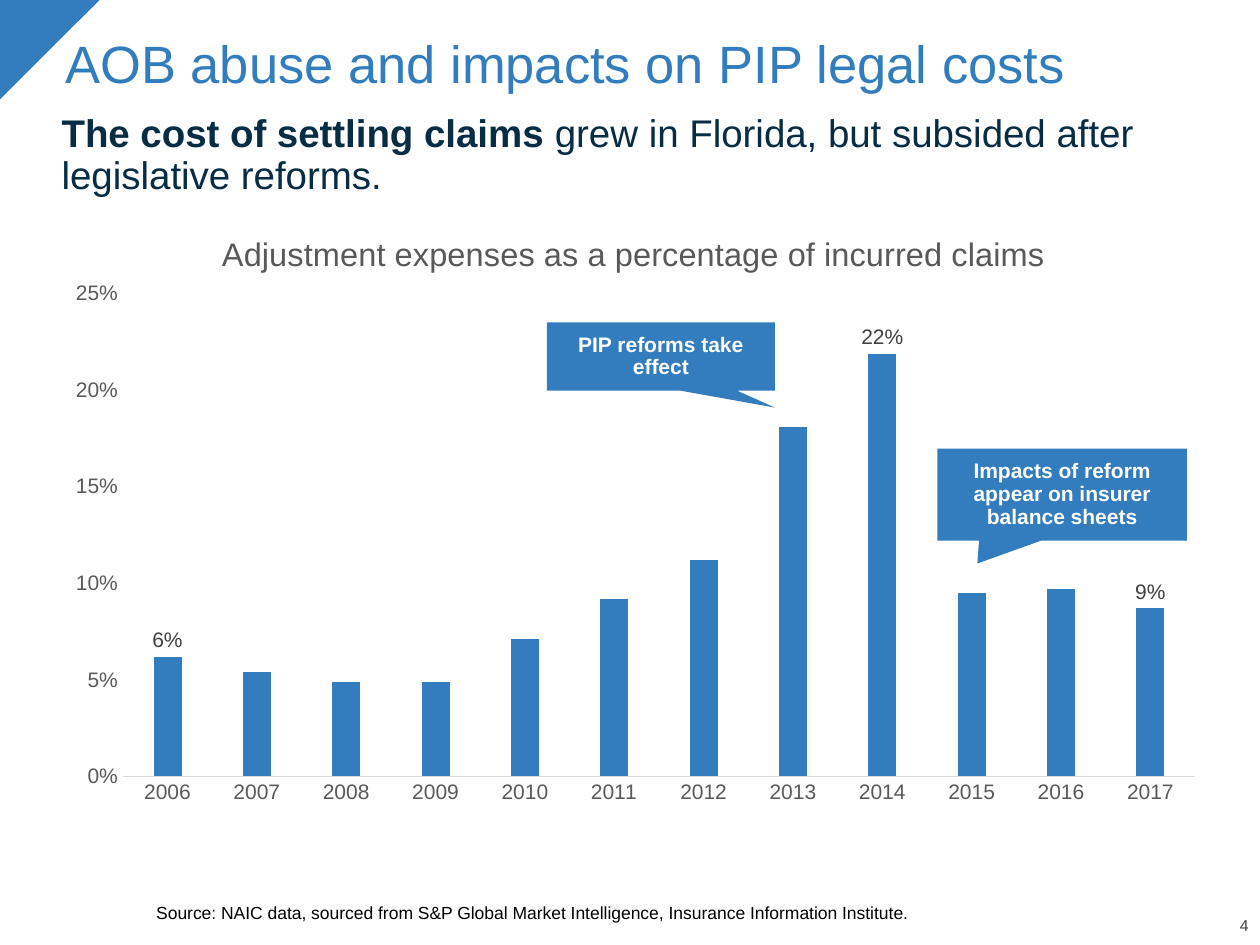
from dataclasses import dataclass

from lxml import etree
from pptx import Presentation
from pptx import util as u
from pptx.chart.data import CategoryChartData
from pptx.dml.color import RGBColor
from pptx.enum import chart as ch
from pptx.enum import shapes, text
from pptx.oxml.ns import qn

BLUE = RGBColor(0x33, 0x7D, 0xBE)
NAVY = RGBColor(0x07, 0x2C, 0x44)
GREY = RGBColor(0x59, 0x59, 0x59)
DARK = RGBColor(0x40, 0x40, 0x40)
PALE = RGBColor(0xD9, 0xD9, 0xD9)
BLACK = RGBColor(0, 0, 0)
WHITE = RGBColor(255, 255, 255)
FACE = "Arial"
WIDE, HIGH = u.Inches(10), u.Inches(7.5)


@dataclass
class Box:
    x: float
    y: float
    w: float
    h: float

    def place(self) -> tuple:
        return tuple(int(part * full / 100) for part, full in
                     zip((self.x, self.y, self.w, self.h), (WIDE, HIGH) * 2))


@dataclass
class Style:
    size: float
    color: RGBColor
    bold: bool = False
    align: text.PP_ALIGN = text.PP_ALIGN.LEFT
    anchor: text.MSO_ANCHOR = text.MSO_ANCHOR.TOP
    inset: bool = True


@dataclass
class Callout:
    words: str
    box: Box
    tip: tuple


def set_font(font, size: float, color: RGBColor, bold: bool = False) -> None:
    font.name, font.size, font.bold = FACE, u.Pt(size), bold
    font.color.rgb = color


def write(shape, runs: list, style: Style) -> None:
    frame = shape.text_frame
    frame.word_wrap = True
    frame.auto_size = text.MSO_AUTO_SIZE.NONE
    frame.vertical_anchor = style.anchor
    if not style.inset:
        frame.margin_left = frame.margin_right = 0
        frame.margin_top = frame.margin_bottom = 0
    para = frame.paragraphs[0]
    para.alignment, para.line_spacing = style.align, 0.9
    set_font(para.font, style.size, style.color, style.bold)
    for words in runs:
        para.add_run().text = words


def add_text(slide, box: Box, runs: list, style: Style):
    shape = slide.shapes.add_textbox(*box.place())
    write(shape, runs, style)
    return shape


def add_solid(slide, kind: shapes.MSO_SHAPE, box: Box):
    shape = slide.shapes.add_shape(kind, *box.place())
    shape.shadow.inherit = False
    shape.fill.solid()
    shape.fill.fore_color.rgb = BLUE
    shape.line.fill.background()
    return shape


def add_callout(slide, note: Callout) -> None:
    shape = add_solid(slide, shapes.MSO_SHAPE.RECTANGULAR_CALLOUT, note.box)
    for i, value in enumerate(note.tip):
        shape.adjustments[i] = value
    write(shape, [note.words], Style(12, WHITE, True, text.PP_ALIGN.CENTER,
                                     text.MSO_ANCHOR.MIDDLE))


def set_layout(part, inner: bool = False, **share: float) -> None:
    old = part.find(qn("c:layout"))
    if old is not None:
        part.remove(old)
    layout = etree.Element(qn("c:layout"))
    manual = etree.SubElement(layout, qn("c:manualLayout"))
    if inner:
        etree.SubElement(manual, qn("c:layoutTarget")).set("val", "inner")
    for mode in ("xMode", "yMode"):
        etree.SubElement(manual, qn("c:" + mode)).set("val", "edge")
    for name, value in share.items():
        etree.SubElement(manual, qn("c:" + name)).set("val", str(value))
    head = part.find(qn("c:tx"))
    if head is None:
        part.insert(0, layout)
    else:
        head.addnext(layout)


def add_bars(slide, box: Box, first: int, costs: list, marks: tuple) -> None:
    data = CategoryChartData(number_format="0%")
    data.categories = [str(first + i) for i in range(len(costs))]
    data.add_series("Series 1", costs)
    chart = slide.shapes.add_chart(
        ch.XL_CHART_TYPE.COLUMN_CLUSTERED, *box.place(), data).chart
    set_font(chart.font, 10, BLACK)
    chart.has_legend = False

    title = chart.chart_title
    para = title.text_frame.paragraphs[0]
    para.text = "Adjustment expenses as a percentage of incurred claims"
    set_font(para.font, 18.6, GREY)
    title.include_in_layout = False
    set_layout(title._element, x=0.14, y=0.04)

    plot = chart.plots[0]
    plot.gap_width, plot.overlap, plot.vary_by_categories = 219, -27, False
    bars = plot.series[0]
    bars.format.fill.solid()
    bars.format.fill.fore_color.rgb = BLUE
    bars.data_labels.show_value = False
    for i in marks:
        label = bars.points[i].data_label
        set_font(label.font, 12, DARK)
        label.position = ch.XL_LABEL_POSITION.OUTSIDE_END

    years, rates = chart.category_axis, chart.value_axis
    for axis in (years, rates):
        axis.major_tick_mark = axis.minor_tick_mark = ch.XL_TICK_MARK.NONE
        axis.has_major_gridlines = False
        set_font(axis.tick_labels.font, 12, GREY)
    years.format.line.color.rgb = PALE
    years.format.line.width = u.Pt(0.75)
    rates.format.line.fill.background()
    rates.minimum_scale, rates.maximum_scale = 0, 0.25
    rates.major_unit = 0.05
    rates.tick_labels.number_format = "0%"
    rates.tick_labels.number_format_is_linked = False
    area = chart._chartSpace.find(".//" + qn("c:plotArea"))
    set_layout(area, True, x=0.06, y=0.15, w=0.92, h=0.785)


COSTS = [0.062, 0.054, 0.049, 0.049, 0.071, 0.092,
         0.112, 0.181, 0.219, 0.095, 0.097, 0.087]
NOTES = [
    Callout("PIP reforms take effect", Box(43.4, 34.13, 18.1, 7.2), (0.5, 0.75)),
    Callout("Impacts of reform appear on insurer balance sheets",
            Box(74.4, 47.47, 19.8, 9.73), (-0.34, 0.75)),
]


def main() -> None:
    deck = Presentation()
    deck.slide_width, deck.slide_height = WIDE, HIGH
    slide = deck.slides.add_slide(deck.slide_layouts[5])

    corner = add_solid(slide, shapes.MSO_SHAPE.RIGHT_TRIANGLE,
                       Box(-0.1, 0, 8, 10.67))
    corner.rotation = 90
    add_text(slide, Box(94.3, 97.2, 4.8, 1.73), ["4"],
             Style(9, DARK, align=text.PP_ALIGN.RIGHT,
                   anchor=text.MSO_ANCHOR.BOTTOM, inset=False))

    title = slide.shapes.title
    title.left, title.top, title.width, title.height = Box(
        4.2, 3.33, 92.5, 13.87).place()
    write(title, ["AOB abuse and impacts on PIP legal costs"], Style(30, BLUE))

    add_bars(slide, Box(4.2, 21.33, 92.5, 65.07), 2006, COSTS, (0, 8, 11))
    lead = add_text(slide, Box(3.9, 11.47, 92.5, 5.73),
                    ["The cost of settling claims",
                     " grew in Florida, but subsided after legislative reforms."],
                    Style(22, NAVY))
    lead.text_frame.paragraphs[0].runs[0].font.bold = True
    add_text(slide, Box(12.4, 91.73, 84, 6),
             ["Source: NAIC data, sourced from S&P Global Market Intelligence, "
              "Insurance Information Institute."],
             Style(10, BLACK, anchor=text.MSO_ANCHOR.BOTTOM, inset=False))
    for note in NOTES:
        add_callout(slide, note)
    deck.save("out.pptx")


if __name__ == "__main__":
    main()
